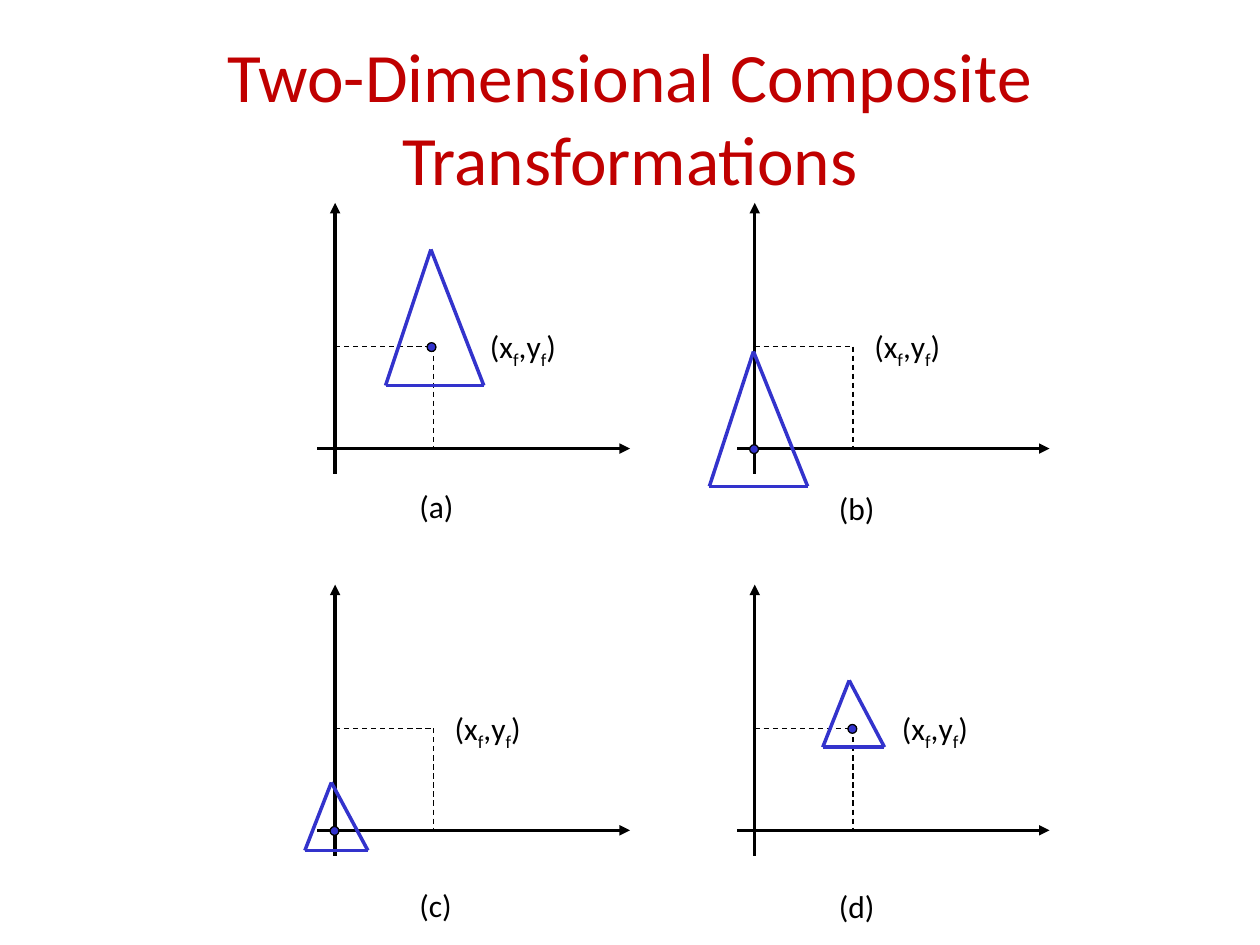
import pptx
import pptx.util
import pptx.dml.color
import pptx.enum.dml
import pptx.enum.shapes
import pptx.enum.text
import pptx.oxml.ns
import lxml.etree

Inches = pptx.util.Inches
Pt = pptx.util.Pt
color = pptx.dml.color.RGBColor.from_string
qn = pptx.oxml.ns.qn

deck = pptx.Presentation()
deck.slide_width = Inches(10)
deck.slide_height = Inches(7.5)
slide = deck.slides.add_slide(deck.slide_layouts[6])
shapes = slide.shapes


def line(x1, y1, x2, y2, hue="000000", width=2, dash=False, arrow=False):
    kind = pptx.enum.shapes.MSO_CONNECTOR.STRAIGHT
    link = shapes.add_connector(kind, Inches(x1), Inches(y1), Inches(x2), Inches(y2))
    link.line.color.rgb = color(hue)
    link.line.width = Pt(width)
    if dash:
        link.line.dash_style = pptx.enum.dml.MSO_LINE.DASH
    if arrow:
        lxml.etree.SubElement(link.line._get_or_add_ln(), qn("a:tailEnd"), type="triangle")
    lxml.etree.SubElement(link._element.spPr, qn("a:effectLst"))


def label(x, y, w, h, parts, size=18, hue="000000"):
    box = shapes.add_textbox(Inches(x), Inches(y), Inches(w), Inches(h))
    frame = box.text_frame
    frame.word_wrap = True
    for part in parts:
        run = frame.paragraphs[0].add_run()
        run.text = part
        run.font.name = "Calibri"
        run.font.size = Pt(size)
        run.font.color.rgb = color(hue)
        if part == "f":
            run.font._element.set("baseline", "-25000")
    return frame


title = label(0.5, 0.3, 9, 1.25, ["Two-Dimensional Composite Transformations"], 39.6, "C00000")
title.vertical_anchor = pptx.enum.text.MSO_ANCHOR.MIDDLE
title.paragraphs[0].alignment = pptx.enum.text.PP_ALIGN.CENTER

blue = "3333CC"
dot = 0.07
panels = [
    ("(a)", 2.66, 3.56, (3.42, 1.98), (3.06, 3.84, 3.06), (3.39, 2.72), 3.79, 3.82),
    ("(b)", 5.99, 3.56, (5.98, 2.79), (5.63, 6.41, 3.86), (5.95, 3.53), 6.84, 3.83),
    ("(c)", 2.66, 6.59, (2.63, 6.21), (2.42, 2.92, 6.75), (2.62, 6.56), 3.51, 6.98),
    ("(d)", 5.99, 6.59, (6.74, 5.4), (6.53, 7.02, 5.93), (6.73, 5.75), 7.06, 6.99),
]

for name, x, y, top, base, spot, note, foot in panels:
    line(x - 0.14, y, x + 2.34, y, arrow=True)
    line(x, y + 0.2, x, y - 1.95, arrow=True)
    line(x, y - 0.81, x + 0.78, y - 0.81, width=0.75, dash=True)
    line(x + 0.78, y - 0.81, x + 0.78, y, width=0.75, dash=True)

    left, right, low = base
    line(*top, right, low, blue)
    line(*top, left, low, blue)
    line(left, low, right, low, blue)

    oval = pptx.enum.shapes.MSO_SHAPE.OVAL
    point = shapes.add_shape(oval, Inches(spot[0]), Inches(spot[1]), Inches(dot), Inches(dot))
    point.shadow.inherit = False
    point.fill.solid()
    point.fill.fore_color.rgb = color(blue)
    point.line.color.rgb = color("000000")
    point.line.width = Pt(0.75)

    label(note, y - 1.01, 0.99, 0.34, ["(x", "f", ",y", "f", ")"])
    label(x + 0.57, foot, 0.99, 0.34, [name])

deck.save("out.pptx")
